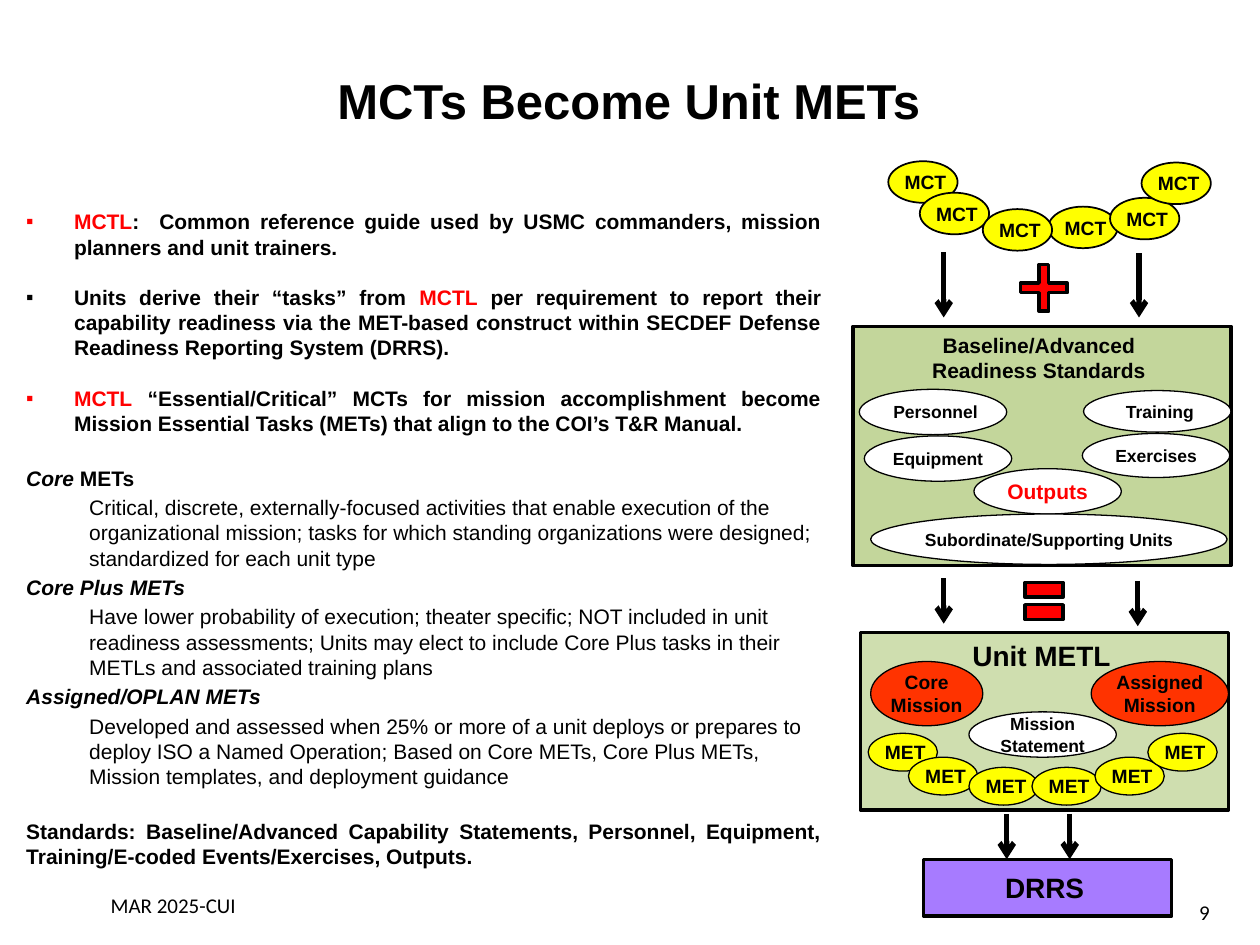
from typing import NamedTuple

from lxml import etree
from pptx import Presentation
from pptx.dml import color
from pptx.enum import shapes, text
from pptx.oxml import ns
from pptx.util import Inches, Pt

BLACK, WHITE, RED = "000000", "FFFFFF", "FF0000"
YELLOW, ORANGE, GREEN, PURPLE = "FFFF00", "FF3300", "C3D69B", "9966FF"
KIND, ALIGN, ANCHOR = shapes.MSO_SHAPE, text.PP_ALIGN, text.MSO_ANCHOR
LINE = 14.4  # height of one 12 pt text line
GAP = 2.4    # 20 % of a 12 pt line


class Run(NamedTuple):
    words: str
    hue: str = BLACK
    italic: bool = False


class Para(NamedTuple):
    runs: list[Run]
    bold: bool = True
    align: ALIGN = ALIGN.LEFT
    before: float = GAP
    indent: float = 0
    bullet: bool = False


class Oval(NamedTuple):
    words: str
    x: float
    y: float
    w: float
    h: float
    fill: str = WHITE
    size: float = 10
    hue: str = BLACK
    edge: float = 0.75
    shift: float = 0


class Panel(NamedTuple):
    lines: list[str]
    x: float
    y: float
    w: float
    h: float
    fill: str
    size: float
    alpha: int = 100
    anchor: ANCHOR = ANCHOR.TOP


def rgb(code: str) -> color.RGBColor:
    return color.RGBColor.from_string(code)


def style(font, size: float, hue: str = BLACK, bold: bool = True, face: str = "Arial") -> None:
    font.size, font.bold, font.name = Pt(size), bold, face
    font.color.rgb = rgb(hue)


def add_form(slide, kind, x: float, y: float, w: float, h: float, fill: str, edge: float):
    form = slide.shapes.add_shape(kind, Inches(x), Inches(y), Inches(w), Inches(h))
    form.shadow.inherit = False
    form.fill.solid()
    form.fill.fore_color.rgb = rgb(fill)
    form.line.color.rgb = rgb(BLACK)
    form.line.width = Pt(edge)
    return form


def set_pad(frame, left: float, top: float, right: float, bottom: float) -> None:
    frame.margin_left, frame.margin_top = Inches(left), Inches(top)
    frame.margin_right, frame.margin_bottom = Inches(right), Inches(bottom)


def add_oval(slide, o: Oval) -> None:
    frame = add_form(slide, KIND.OVAL, o.x, o.y, o.w, o.h, o.fill, o.edge).text_frame
    set_pad(frame, o.shift, 0, 0, 0)
    frame.vertical_anchor = ANCHOR.MIDDLE
    par = frame.paragraphs[0]
    par.text, par.alignment = o.words, ALIGN.CENTER
    style(par.font, o.size, o.hue)


def add_panel(slide, p: Panel) -> None:
    form = add_form(slide, KIND.RECTANGLE, p.x, p.y, p.w, p.h, p.fill, 2)
    if p.alpha < 100:
        hue = form.fill._xPr.find(".//" + ns.qn("a:srgbClr"))
        etree.SubElement(hue, ns.qn("a:alpha"), val=str(p.alpha * 1000))
    frame = form.text_frame
    set_pad(frame, 0.05, 0.05, 0.1, 0.05)
    frame.word_wrap, frame.vertical_anchor = False, p.anchor
    frame.text = "\n".join(p.lines)
    for par in frame.paragraphs:
        par.alignment = ALIGN.CENTER
        style(par.font, p.size)


def add_arrow(slide, x: float, top: float, end: float) -> None:
    arrow = slide.shapes.add_connector(
        shapes.MSO_CONNECTOR.STRAIGHT, Inches(x), Inches(top), Inches(x), Inches(end))
    arrow.line.color.rgb = rgb(BLACK)
    arrow.line.width = Pt(3)
    etree.SubElement(arrow.line._get_or_add_ln(), ns.qn("a:tailEnd"), type="arrow")
    etree.SubElement(arrow._element.spPr, ns.qn("a:effectLst"))


def add_box(slide, x: float, y: float, w: float, h: float):
    frame = slide.shapes.add_textbox(Inches(x), Inches(y), Inches(w), Inches(h)).text_frame
    frame.word_wrap = True
    return frame


def add_label(slide, words: str, x: float, y: float, w: float, h: float, align: ALIGN,
              size: float = 12, bold: bool = False, face: str = "Calibri") -> None:
    frame = add_box(slide, x, y, w, h)
    frame.vertical_anchor = ANCHOR.MIDDLE
    par = frame.paragraphs[0]
    par.text, par.alignment = words, align
    style(par.font, size, BLACK, bold, face)


def fill_para(par, p: Para) -> None:
    props = par._p.get_or_add_pPr()
    props.set("marL", str(Inches(p.indent)))
    props.set("indent", str(-Inches(p.indent) if p.bullet else 0))
    if p.bullet:
        etree.SubElement(props, ns.qn("a:buFont"), typeface="Arial")
        etree.SubElement(props, ns.qn("a:buChar"), char="▪")
    par.alignment, par.space_before = p.align, Pt(p.before)
    style(par.font, 12, BLACK, p.bold)
    for r in p.runs:
        run = par.add_run()
        run.text, run.font.italic = r.words, r.italic
        run.font.color.rgb = rgb(r.hue)


def point(*runs: Run, before: float = LINE) -> Para:
    return Para(list(runs), align=ALIGN.JUSTIFY, before=before, indent=0.38, bullet=True)


def detail(words: str) -> Para:
    return Para([Run(words)], bold=False, indent=0.5)


MCTL = Run("MCTL", RED)
BODY = [
    point(MCTL, Run(":  Common reference guide used by USMC commanders, mission planners "
                    "and unit trainers."), before=0),
    point(Run("Units derive their “tasks” from "), MCTL,
          Run(" per requirement to report their capability readiness via the MET-based "
              "construct within SECDEF Defense Readiness Reporting System (DRRS).")),
    point(MCTL, Run(" “Essential/Critical” MCTs for mission accomplishment become Mission "
                    "Essential Tasks (METs) that align to the COI’s T&R Manual.")),
    Para([Run("Core", italic=True), Run(" METs")], before=LINE + GAP),
    detail("Critical, discrete, externally-focused activities that enable execution of the "
           "organizational mission; tasks for which standing organizations were designed; "
           "standardized for each unit type"),
    Para([Run("Core Plus METs", italic=True)]),
    detail("Have lower probability of execution; theater specific; NOT included in unit "
           "readiness assessments; Units may elect to include Core Plus tasks in their METLs "
           "and associated training plans"),
    Para([Run("Assigned/OPLAN METs", italic=True)]),
    detail("Developed and assessed when 25% or more of a unit deploys or prepares to deploy "
           "ISO a Named Operation; Based on Core METs, Core Plus METs, Mission templates, "
           "and deployment guidance"),
    Para([Run("Standards: Baseline/Advanced Capability Statements, Personnel, Equipment, "
              "Training/E-coded Events/Exercises, Outputs.")],
         align=ALIGN.JUSTIFY, before=LINE + GAP),
]
PANELS = [
    Panel(["Unit METL"], 6.83, 5.02, 2.92, 1.41, GREEN, 16, 80),
    Panel(["DRRS"], 7.33, 6.82, 1.97, 0.45, PURPLE, 16, 86, ANCHOR.MIDDLE),
    Panel(["Baseline/Advanced", "Readiness Standards"], 6.77, 2.59, 3, 1.9, GREEN, 12),
]
MCTS = [(7.05, 1.28), (7.3, 1.53), (8.32, 1.64), (8.81, 1.57), (7.8, 1.66), (9.06, 1.29)]
METS = [(6.89, 5.82), (7.21, 6.01), (7.69, 6.09), (8.19, 6.09), (8.69, 6.01), (9.11, 5.82)]
OVALS = [
    Oval("Core Mission", 6.91, 5.25, 0.89, 0.51, ORANGE, 11),
    Oval("Assigned Mission", 8.66, 5.25, 1.09, 0.51, ORANGE, 11),
    Oval("Personnel", 6.82, 3.09, 1.17, 0.36, shift=0.04),
    Oval("Equipment", 6.86, 3.46, 1.17, 0.36),
    Oval("Outputs", 7.73, 3.72, 1.17, 0.36, size=12, hue=RED),
    Oval("Subordinate/Supporting Units", 6.91, 4.08, 2.83, 0.4),
    Oval("Training", 8.6, 3.1, 1.17, 0.33, shift=0.04),
    Oval("Exercises", 8.59, 3.44, 1.17, 0.35),
    *(Oval("MCT", x, y, 0.55, 0.33, YELLOW, 11, edge=1, shift=0.04) for x, y in MCTS),
    *(Oval("MET", x, y, 0.55, 0.3, YELLOW, 11, shift=0.04) for x, y in METS),
    Oval("Mission Statement", 7.69, 5.65, 1.17, 0.36),
]
ARROWS = [(7.49, 2, 2.52), (9.04, 2.01, 2.52), (7.49, 4.59, 4.95), (9.03, 4.61, 4.97),
          (7.99, 6.46, 6.82), (8.49, 6.46, 6.82)]


def main() -> None:
    deck = Presentation()
    deck.slide_width, deck.slide_height = Inches(10), Inches(7.5)
    slide = deck.slides.add_slide(deck.slide_layouts[6])
    add_label(slide, "MCTs Become Unit METs", -0.02, 0.42, 10.02, 0.75, ALIGN.CENTER,
              28, True, "Arial")
    for panel in PANELS:
        add_panel(slide, panel)
    for oval in OVALS:
        add_oval(slide, oval)
    plus = add_form(slide, KIND.CROSS, 8.1, 2.1, 0.37, 0.37, RED, 2)
    plus.adjustments[0] = 0.395
    add_form(slide, KIND.MATH_EQUAL, 8.08, 4.52, 0.41, 0.5, RED, 2)
    for arrow in ARROWS:
        add_arrow(slide, *arrow)
    frame = add_box(slide, 0.11, 1.61, 6.51, 5.57)
    for i, para in enumerate(BODY):
        fill_para(frame.add_paragraph() if i else frame.paragraphs[0], para)
    add_label(slide, "MAR 2025-CUI", -0.02, 6.98, 2.79, 0.4, ALIGN.CENTER)
    add_label(slide, "9", 7.8, 7.04, 1.9, 0.4, ALIGN.RIGHT)
    deck.save("out.pptx")


if __name__ == "__main__":
    main()
